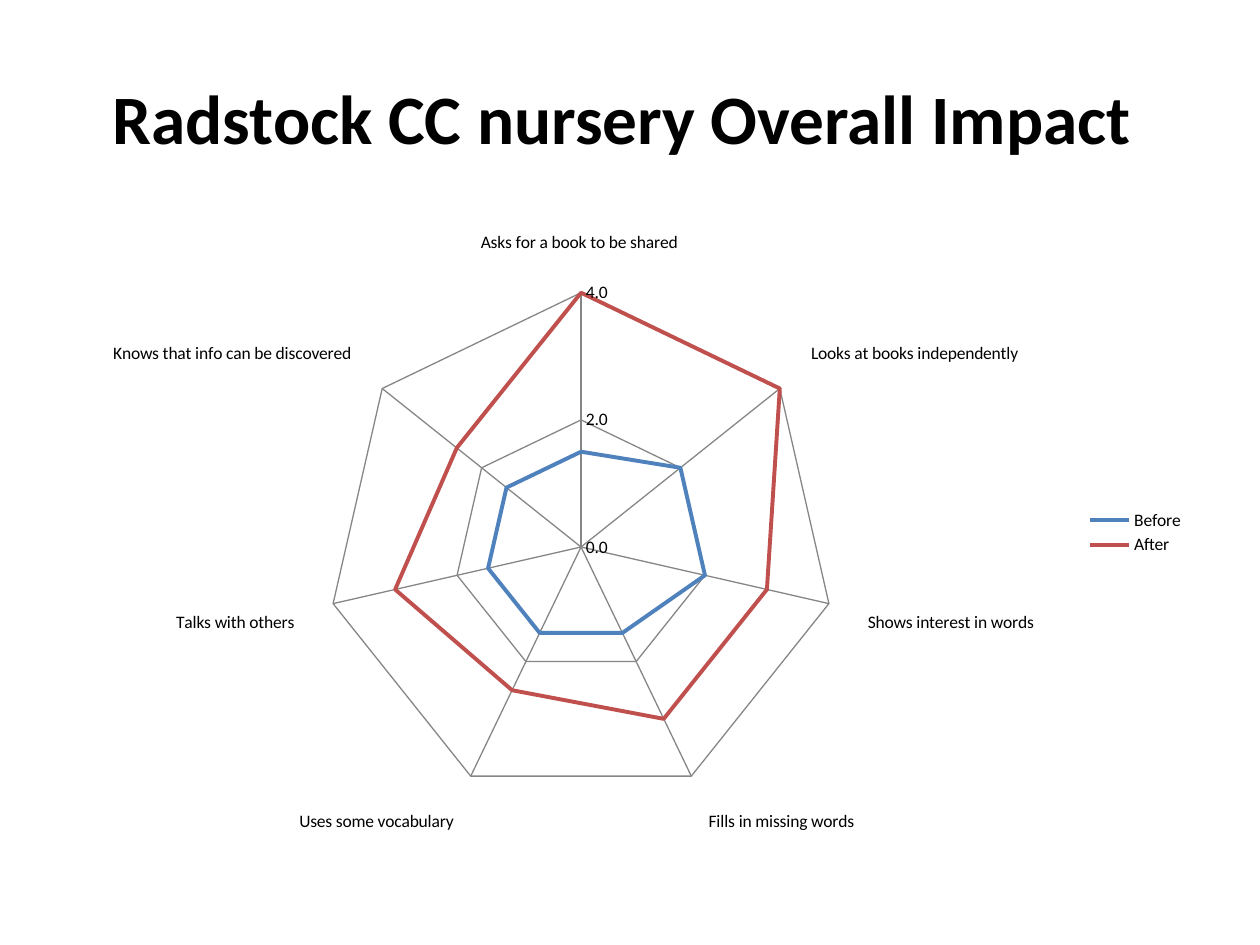
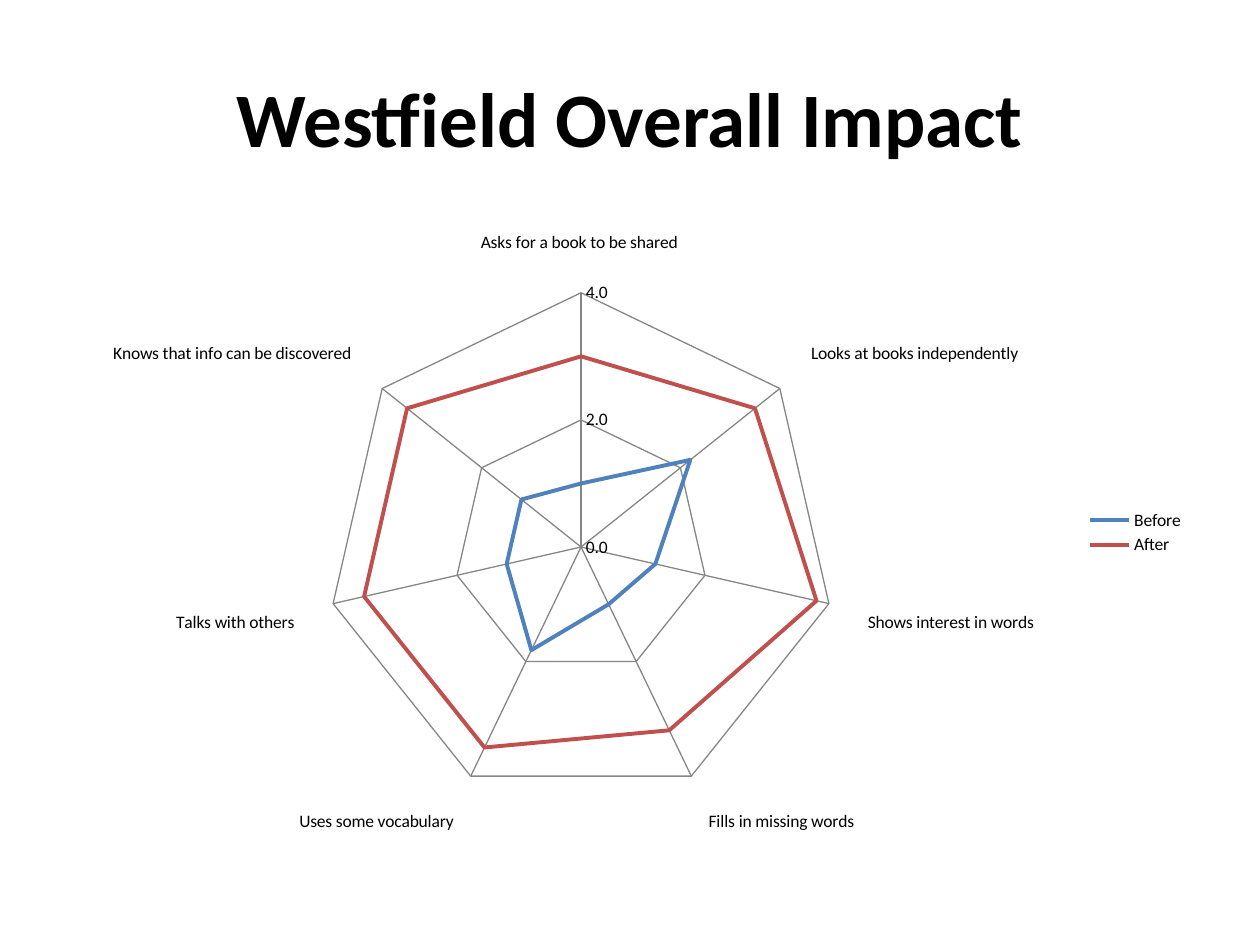
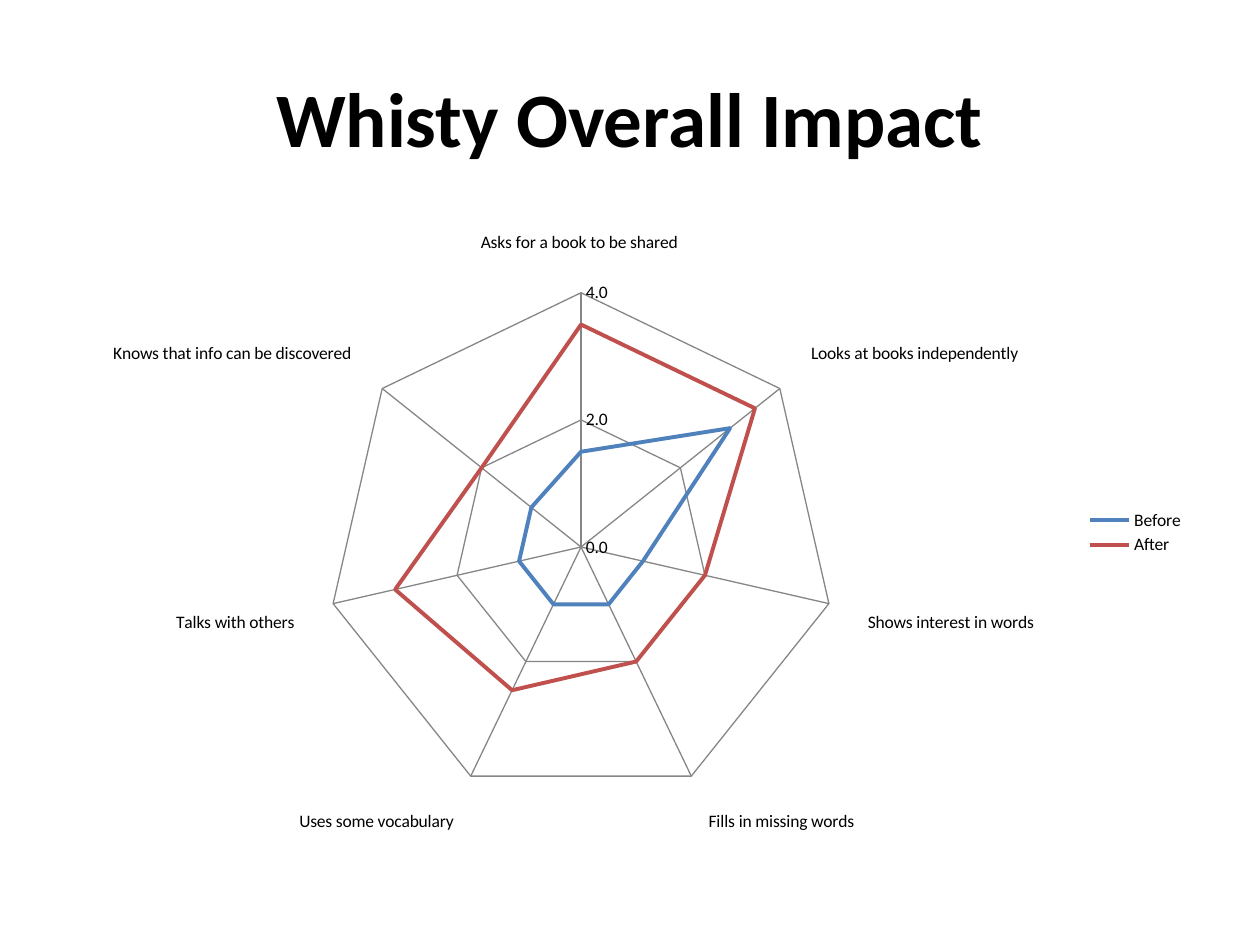
import pptx
import pptx.chart.data
import pptx.dml.color
import pptx.enum.chart
import pptx.enum.text
import pptx.util

Cm = pptx.util.Cm
Pt = pptx.util.Pt

FONT = "Calibri"
COLORS = {
    "background": "FFFFFF",
    "text": "000000",
    "grid": "868686",
    "Before": "4F81BD",
    "After": "C0504D",
}
TITLE_ONLY_LAYOUT = 5
MARGIN = Cm(1.27)
CONTENT_WIDTH = Cm(22.86)

SKILLS = [
    "Asks for a book to be shared ",
    "Looks at books independently",
    "Shows interest in words",
    "Fills in missing words",
    "Uses some vocabulary",
    "Talks with others",
    "Knows that info can be discovered",
]

# Title, title size in points, scores before and after
SETTINGS = [
    ("Radstock CC nursery Overall Impact ", 39.6,
     [1.5, 2, 2, 1.5, 1.5, 1.5, 1.5], [4, 4, 3, 3, 2.5, 3, 2.5]),
    ("Westfield Overall Impact", 44,
     [1, 2.2, 1.2, 1, 1.8, 1.2, 1.2], [3, 3.5, 3.8, 3.2, 3.5, 3.5, 3.5]),
    ("Whisty Overall Impact", 44,
     [1.5, 3, 1, 1, 1, 1, 1], [3.5, 3.5, 2, 2, 2.5, 3, 2]),
]


def color(name):
    return pptx.dml.color.RGBColor.from_string(COLORS[name])


def format_font(font, size):
    font.name = FONT
    font.size = Pt(size)
    font.color.rgb = color("text")


def format_line(line, color_name, width):
    line.color.rgb = color(color_name)
    line.width = Pt(width)


def set_title(slide, text, size):
    title = slide.shapes.title
    title.left, title.top = MARGIN, Cm(0.76)
    title.width, title.height = CONTENT_WIDTH, Cm(3.18)
    text_frame = title.text_frame
    text_frame.text = text
    text_frame.vertical_anchor = pptx.enum.text.MSO_ANCHOR.MIDDLE
    paragraph = text_frame.paragraphs[0]
    paragraph.alignment = pptx.enum.text.PP_ALIGN.CENTER
    for run in paragraph.runs:
        format_font(run.font, size)
        run.font.bold = True


def format_axes(chart):
    for axis in (chart.category_axis, chart.value_axis):
        axis.major_tick_mark = pptx.enum.chart.XL_TICK_MARK.NONE
        axis.minor_tick_mark = pptx.enum.chart.XL_TICK_MARK.NONE
        axis.has_major_gridlines = True
        format_line(axis.major_gridlines.format.line, "grid", 0.75)
    chart.category_axis.format.line.fill.background()

    value_axis = chart.value_axis
    format_line(value_axis.format.line, "grid", 0.75)
    value_axis.minimum_scale = 0
    value_axis.maximum_scale = 4
    value_axis.major_unit = 2
    value_axis.tick_labels.number_format = "0.0"
    value_axis.tick_labels.number_format_is_linked = False


def add_impact_chart(slide, before, after):
    chart_data = pptx.chart.data.CategoryChartData(number_format="0.0")
    chart_data.categories = SKILLS
    chart_data.add_series("Before", before)
    chart_data.add_series("After", after)
    chart = slide.shapes.add_chart(
        pptx.enum.chart.XL_CHART_TYPE.RADAR,
        MARGIN, Cm(4.45), CONTENT_WIDTH, Cm(12.57), chart_data,
    ).chart

    format_font(chart.font, 10)
    chart.has_title = False
    chart.has_legend = True
    chart.legend.position = pptx.enum.chart.XL_LEGEND_POSITION.RIGHT
    chart.legend.include_in_layout = False
    format_axes(chart)

    plot = chart.plots[0]
    plot.vary_by_categories = False
    for series in plot.series:
        format_line(series.format.line, series.name, 2.25)
        series.marker.style = pptx.enum.chart.XL_MARKER_STYLE.NONE


def add_impact_slide(presentation, title, title_size, before, after):
    layout = presentation.slide_layouts[TITLE_ONLY_LAYOUT]
    slide = presentation.slides.add_slide(layout)
    set_title(slide, title, title_size)
    add_impact_chart(slide, before, after)


def main():
    presentation = pptx.Presentation()
    presentation.slide_width = Cm(25.4)
    presentation.slide_height = Cm(19.05)
    background = presentation.slide_master.background.fill
    background.solid()
    background.fore_color.rgb = color("background")
    for setting in SETTINGS:
        add_impact_slide(presentation, *setting)
    presentation.save("out.pptx")


if __name__ == "__main__":
    main()
